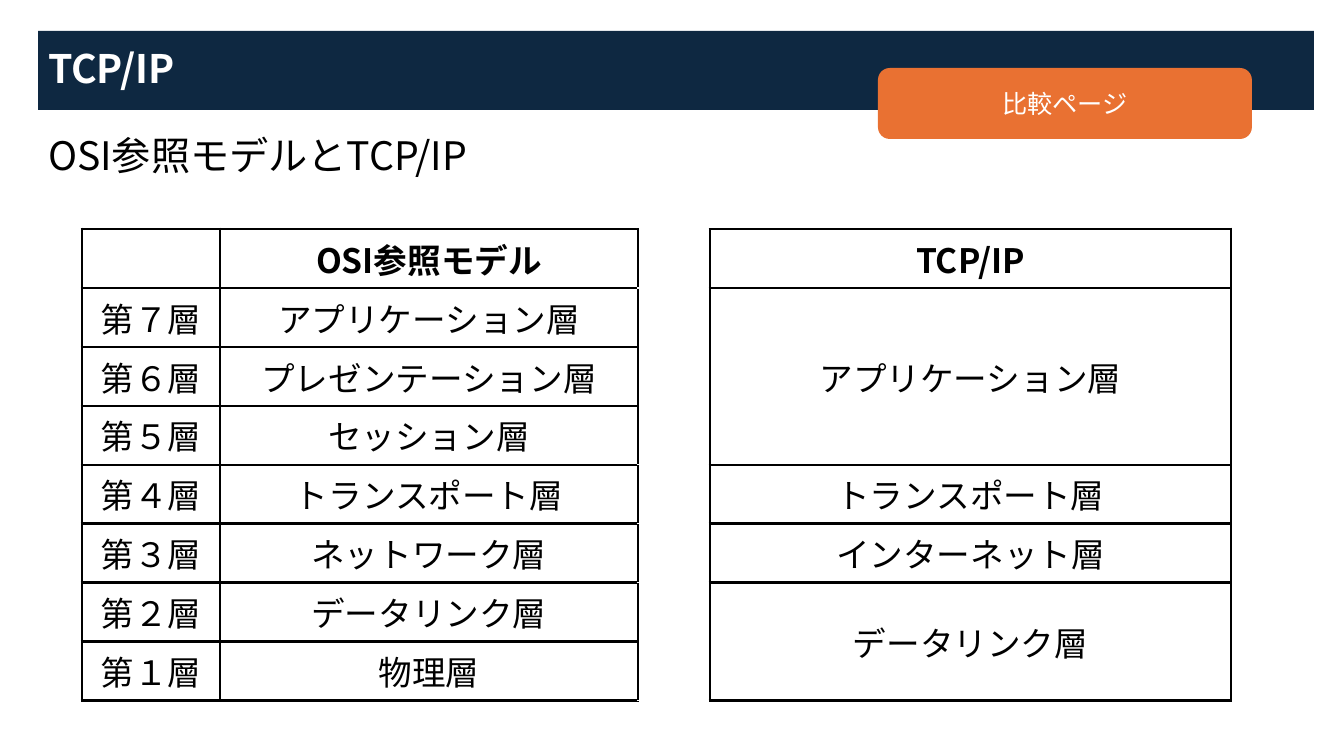
from lxml.etree import SubElement
from pptx import Presentation
from pptx.dml.color import RGBColor
from pptx.enum.shapes import MSO_SHAPE
from pptx.enum.text import MSO_ANCHOR, MSO_AUTO_SIZE, PP_ALIGN
from pptx.oxml import parse_xml
from pptx.oxml.ns import nsdecls, qn
from pptx.util import Pt

EMU_PER_PX = 914400 / 100.8
FONT = "Noto Sans CJK JP"
NAVY = RGBColor(0x0E, 0x28, 0x41)
ORANGE = RGBColor(0xE9, 0x71, 0x32)
WHITE = RGBColor(0xFF, 0xFF, 0xFF)
BLACK = RGBColor(0, 0, 0)


def px(*lengths):
    return [round(n * EMU_PER_PX) for n in lengths]


def write(tf, text, size=24, color=BLACK, bold=False, align=PP_ALIGN.CENTER,
          anchor=MSO_ANCHOR.MIDDLE, line_spacing=1.0):
    tf.word_wrap = True
    tf.vertical_anchor = anchor
    p = tf.paragraphs[0]
    p.alignment = align
    p.line_spacing = line_spacing
    p.space_before = Pt(0)
    r = p.add_run()
    r.text = text
    r.font.size = Pt(size)
    r.font.bold = bold
    r.font.color.rgb = color
    r.font.name = FONT
    SubElement(r._r.get_or_add_rPr(), qn("a:ea"), typeface=FONT)
    return p


prs = Presentation()
prs.slide_width, prs.slide_height = px(1344, 756)
s = prs.slides.add_slide(prs.slide_layouts[1])

# Title bar and subtitle
title, body = s.placeholders
title.left, title.top, title.width, title.height = px(38, 31, 1276, 79)
title.fill.solid()
title.fill.fore_color.rgb = NAVY
title.text_frame.auto_size = MSO_AUTO_SIZE.NONE
write(title.text_frame, "TCP/IP", size=28, color=WHITE, bold=True,
      align=PP_ALIGN.LEFT, line_spacing=0.9)

body.left, body.top, body.width, body.height = px(38, 132, 1276, 549)
body.text_frame.auto_size = MSO_AUTO_SIZE.NONE
p = write(body.text_frame, "OSI参照モデルとTCP/IP", size=28,
          align=PP_ALIGN.LEFT, anchor=MSO_ANCHOR.TOP, line_spacing=0.9)
pPr = p._p.get_or_add_pPr()
pPr.set("marL", "0")
pPr.set("indent", "0")
SubElement(pPr, qn("a:buNone"))

# Layer comparison: number, OSI layer, gap, TCP/IP layer
LAYERS = [
    ("", "OSI参照モデル", "TCP/IP"),
    ("第７層", "アプリケーション層", "アプリケーション層"),
    ("第６層", "プレゼンテーション層", ""),
    ("第５層", "セッション層", ""),
    ("第４層", "トランスポート層", "トランスポート層"),
    ("第３層", "ネットワーク層", "インターネット層"),
    ("第２層", "データリンク層", "データリンク層"),
    ("第１層", "物理層", ""),
]
COL_WIDTHS = px(138, 418, 72, 521)
ROW_HEIGHT = 59
GAP_COL, TCP_COL = 2, 3
MERGED_ROWS = [(1, 3), (6, 7)]

table = s.shapes.add_table(len(LAYERS), len(COL_WIDTHS),
                           *px(82, 229, 1149, ROW_HEIGHT * len(LAYERS))).table
table.first_row = table.horz_banding = False
for column, width in zip(table.columns, COL_WIDTHS):
    column.width = width

for row, (number, osi, tcp) in enumerate(LAYERS):
    table.rows[row].height = px(ROW_HEIGHT)[0]
    for col, text in enumerate((number, osi, "", tcp)):
        cell = table.cell(row, col)
        tcPr = cell._tc.get_or_add_tcPr()
        for side in "LR" if col == GAP_COL else "LRTB":
            tcPr.append(parse_xml(
                f'<a:ln{side} {nsdecls("a")} w="{Pt(2.25)}"><a:solidFill>'
                f'<a:srgbClr val="{BLACK}"/></a:solidFill></a:ln{side}>'))
        cell.fill.solid()
        cell.fill.fore_color.rgb = WHITE
        cell.vertical_anchor = MSO_ANCHOR.MIDDLE
        if text:
            write(cell.text_frame, text, bold=row == 0)

for first, last in MERGED_ROWS:
    for col in (GAP_COL, TCP_COL):
        table.cell(first, col).merge(table.cell(last, col))

# Badge
badge = s.shapes.add_shape(MSO_SHAPE.ROUNDED_RECTANGLE, *px(878, 68, 374, 71))
badge.shadow.inherit = False
badge.fill.solid()
badge.fill.fore_color.rgb = ORANGE
badge.line.fill.background()
write(badge.text_frame, "比較ページ", size=18, color=WHITE)

prs.save("out.pptx")
